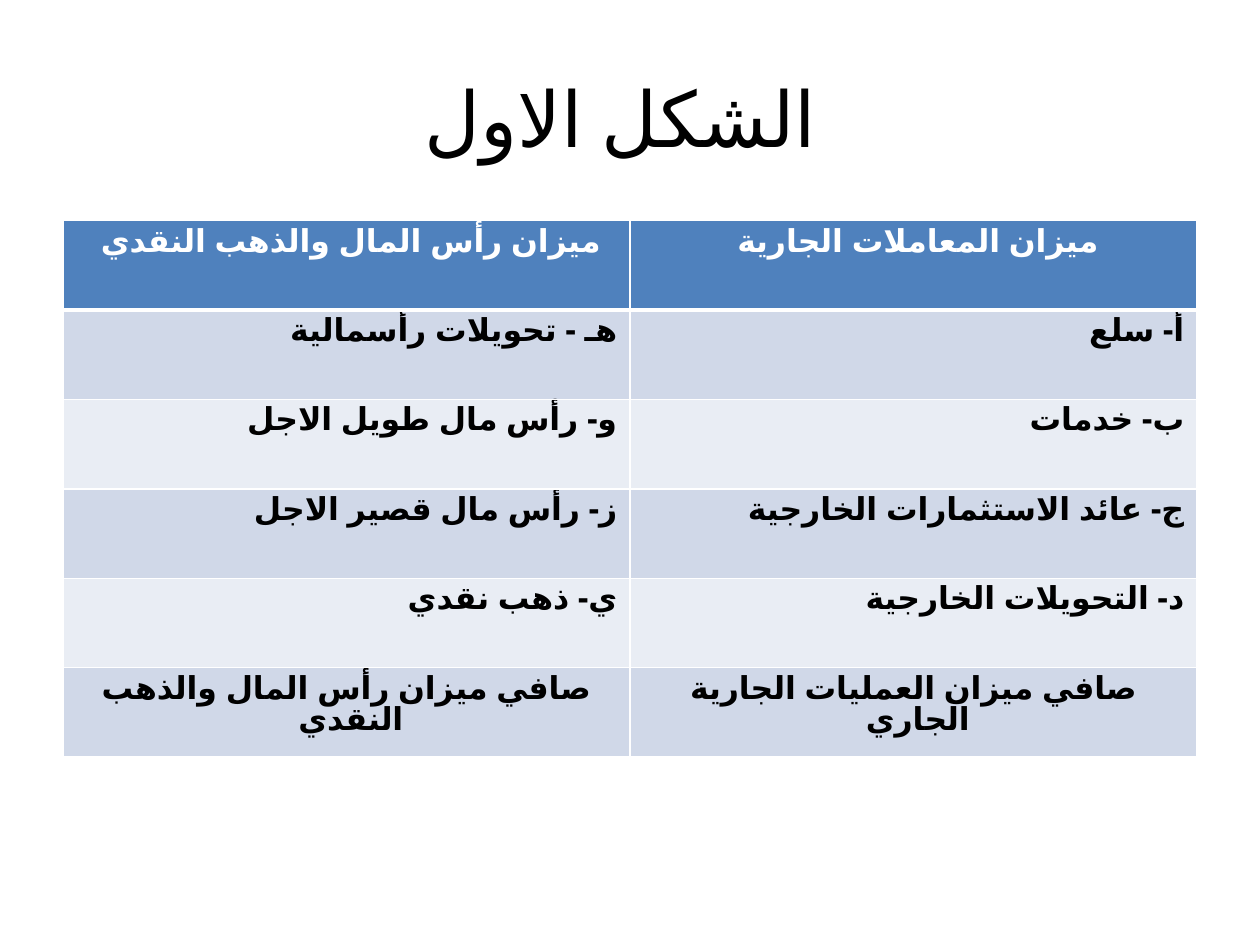
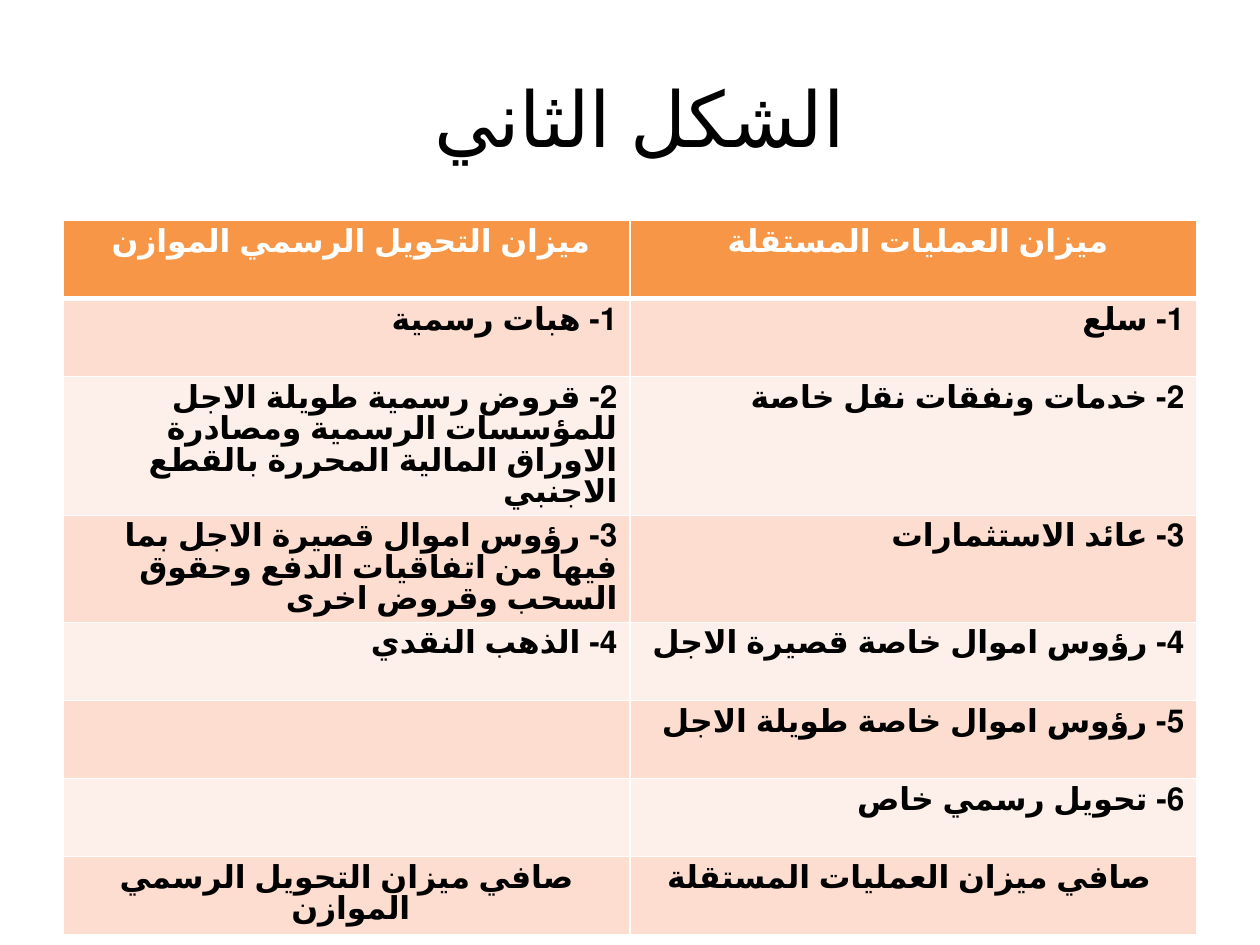
from lxml.etree import SubElement
from pptx import Presentation
from pptx.dml.color import RGBColor
from pptx.enum.lang import MSO_LANGUAGE_ID
from pptx.enum.text import MSO_ANCHOR, PP_ALIGN
from pptx.oxml.ns import qn
from pptx.util import Inches, Pt

BLACK, WHITE = "000000", "FFFFFF"
LEFT_TO_RIGHT = {"الشكل الاول ", "صافي ميزان العمليات المستقلة "}

SLIDES = [
    {
        "title": "الشكل الاول ",
        "header": "4F81BD",
        "bands": ("D0D8E8", "E9EDF4"),
        "row_height": 0.71,
        "rows": [
            ("ميزان رأس المال والذهب النقدي ", "ميزان المعاملات الجارية "),
            ("هـ - تحويلات رأسمالية ", "أ- سلع "),
            ("و- رأس مال طويل الاجل ", "ب- خدمات "),
            ("ز- رأس مال قصير الاجل ", "ج- عائد الاستثمارات الخارجية "),
            ("ي- ذهب نقدي ", "د- التحويلات الخارجية "),
            ("صافي ميزان رأس المال والذهب النقدي ", "صافي ميزان العمليات الجارية الجاري "),
        ],
    },
    {
        "title": "الشكل الثاني ",
        "header": "F79646",
        "bands": ("FCDDCF", "FDEFE9"),
        "row_height": 0.62,
        "rows": [
            ("ميزان التحويل الرسمي الموازن ", "ميزان العمليات المستقلة "),
            ("1- هبات رسمية ", "1- سلع "),
            ("2- قروض رسمية طويلة الاجل للمؤسسات الرسمية ومصادرة الاوراق المالية المحررة بالقطع الاجنبي ",
             "2- خدمات ونفقات نقل خاصة "),
            ("3- رؤوس اموال قصيرة الاجل بما فيها من اتفاقيات الدفع وحقوق السحب وقروض اخرى ",
             "3- عائد الاستثمارات "),
            ("4- الذهب النقدي ", "4- رؤوس اموال خاصة قصيرة الاجل "),
            ("", "5- رؤوس اموال خاصة طويلة الاجل "),
            ("", "6- تحويل رسمي خاص "),
            ("صافي ميزان التحويل الرسمي الموازن ", "صافي ميزان العمليات المستقلة "),
        ],
    },
]


def rgb(color):
    return RGBColor.from_string(color)


def write(tf, text, align, color, font):
    p = tf.paragraphs[0]
    p.alignment = align
    p._p.get_or_add_pPr().set("rtl", "0" if text in LEFT_TO_RIGHT else "1")
    r = p.add_run()
    r.text = text
    for name, value in font.items():
        setattr(r.font, name, value)
    r.font.color.rgb = rgb(color)
    return p


ARABIC_FONT = {"name": "Calibri", "language_id": MSO_LANGUAGE_ID.ARABIC}
TITLE_FONT = {**ARABIC_FONT, "size": Pt(44)}
CELL_FONT = {**ARABIC_FONT, "size": Pt(18), "bold": True}

prs = Presentation()
prs.slide_width, prs.slide_height = Inches(10), Inches(7.5)

for data in SLIDES:
    s = prs.slides.add_slide(prs.slide_layouts[5])
    title = s.shapes.title
    frame = {"left": 0.5, "top": 0.3, "width": 9, "height": 1.25}
    for name, value in frame.items():
        setattr(title, name, Inches(value))
    title.text_frame.vertical_anchor = MSO_ANCHOR.MIDDLE
    write(title.text_frame, data["title"], PP_ALIGN.CENTER, BLACK, TITLE_FONT)

    rows = data["rows"]
    table = s.shapes.add_table(
        len(rows), 2, Inches(0.5), Inches(1.75),
        Inches(9), Inches(data["row_height"] * len(rows))).table
    for i, row in enumerate(rows):
        table.rows[i].height = Inches(data["row_height"])
        fill = data["bands"][(i - 1) % 2] if i else data["header"]
        align = PP_ALIGN.CENTER if i in (0, len(rows) - 1) else PP_ALIGN.RIGHT
        for j, text in enumerate(row):
            cell = table.cell(i, j)
            tcPr = cell._tc.get_or_add_tcPr()
            for n, side in enumerate(("lnL", "lnR", "lnT", "lnB")):
                thick = (i, side) in ((0, "lnB"), (1, "lnT"))
                ln = SubElement(tcPr, qn("a:" + side), w=str(Pt(3 if thick else 1)))
                line_fill = SubElement(ln, qn("a:solidFill"))
                SubElement(line_fill, qn("a:srgbClr"), val=WHITE)
            cell.fill.solid()
            cell.fill.fore_color.rgb = rgb(fill)
            if text:
                p = write(cell.text_frame, text, align, BLACK if i else WHITE, CELL_FONT)
                p.line_spacing = Pt(18)

prs.save("out.pptx")
